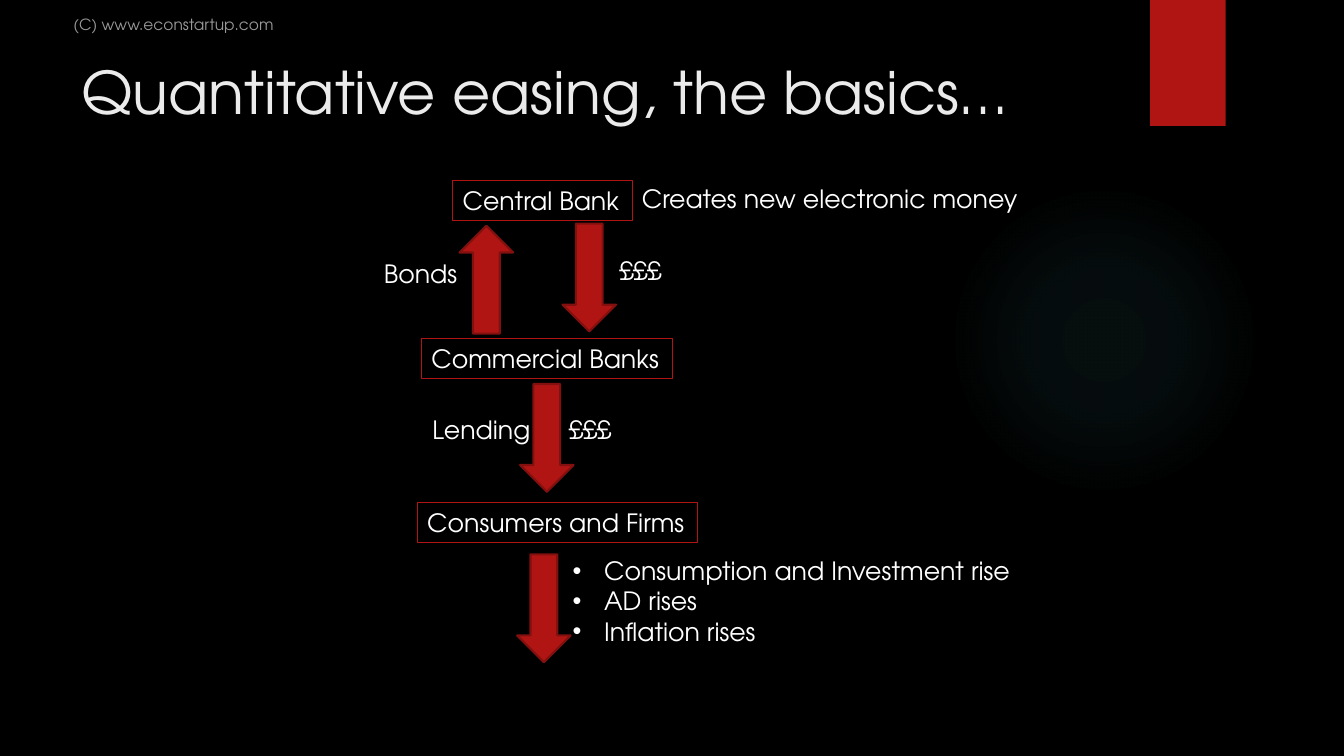
from lxml import etree
from pptx import Presentation
from pptx.dml.color import RGBColor
from pptx.enum.shapes import MSO_SHAPE
from pptx.enum.text import MSO_ANCHOR, MSO_AUTO_SIZE, PP_ALIGN
from pptx.oxml.ns import qn
from pptx.util import Pt

OVAL, RECT = MSO_SHAPE.OVAL, MSO_SHAPE.RECTANGLE
UP, DOWN = MSO_SHAPE.UP_ARROW, MSO_SHAPE.DOWN_ARROW
TOP, BOTTOM = MSO_ANCHOR.TOP, MSO_ANCHOR.BOTTOM
LEFT = PP_ALIGN.LEFT
FIT_SHAPE, NO_FIT = MSO_AUTO_SIZE.SHAPE_TO_FIT_TEXT, MSO_AUTO_SIZE.NONE

BLACK = RGBColor(0x00, 0x00, 0x00)
WHITE = RGBColor(0xFF, 0xFF, 0xFF)
OFF_WHITE = RGBColor(0xEB, 0xEB, 0xEB)
GREY = RGBColor(0x99, 0x99, 0x99)
RED = RGBColor(0xB0, 0x15, 0x13)
DARK_RED = RGBColor(0x82, 0x10, 0x0E)
TEAL = RGBColor(0x50, 0xB9, 0xC1)
FONT = "TeX Gyre Adventor"

TITLE = "Quantitative easing, the basics…"
COPYRIGHT = "(C) www.econstartup.com"
EFFECTS = ["Consumption and Investment rise", "AD rises", "Inflation rises"]
ACTORS = [
    ("Central Bank", 323.3, 128.9, 128.2),
    ("Commercial Banks", 301, 241.9, 179.3),
    ("Consumers and Firms", 298.1, 358.6, 200.2),
]
FLOW_LABELS = [
    ("Creates new electronic money", 451.4, 127.4, 288),
    ("Bonds", 267.1, 180.7, 67.7),
    ("£££", 434.9, 178.6, 44.6),
    ("Lending", 301.7, 292.3, 85.7),
    ("£££", 398.9, 292.3, 44.6),
]
FLOWS = [
    (DOWN, 401.8, 159.8),
    (UP, 328.3, 161.3),
    (DOWN, 371.5, 274.3),
    (DOWN, 369.4, 396),
]
GLOW_STOPS = [(0, 7), (36, 6), (69, 0)]
LABEL_HEIGHT = 28.8
ARROW_SIZE = (38.2, 77)
BULLET_INDENT = 22.5


def place(shape, left, top, width, height):
    shape.left, shape.top = Pt(left), Pt(top)
    shape.width, shape.height = Pt(width), Pt(height)


def write(paragraph, text, size, color):
    paragraph.alignment = LEFT
    run = paragraph.add_run()
    run.text = text
    run.font.name = FONT
    run.font.size = Pt(size)
    run.font.color.rgb = color


def add_solid(slide, kind, left, top, width, height):
    shape = slide.shapes.add_shape(kind, Pt(left), Pt(top), Pt(width), Pt(height))
    shape.shadow.inherit = False
    shape.fill.solid()
    shape.fill.fore_color.rgb = RED
    shape.line.fill.background()
    return shape


def add_glow(slide):
    glow = add_solid(slide, OVAL, 677.5, 131.8, 221.8, 221.8)
    solid = glow._element.spPr.find(qn("a:solidFill"))
    gradient = etree.Element(qn("a:gradFill"), rotWithShape="1")
    stops = etree.SubElement(gradient, qn("a:gsLst"))
    for position, opacity in GLOW_STOPS:
        stop = etree.SubElement(stops, qn("a:gs"), pos=str(position * 1000))
        color = etree.SubElement(stop, qn("a:srgbClr"), val=str(TEAL))
        etree.SubElement(color, qn("a:alpha"), val=str(opacity * 1000))
    radial = etree.SubElement(gradient, qn("a:path"), path="circle")
    etree.SubElement(radial, qn("a:fillToRect"), l="50000", t="50000", r="50000", b="50000")
    solid.getparent().replace(solid, gradient)


def add_label(slide, text, left, top, width):
    label = slide.shapes.add_textbox(Pt(left), Pt(top), Pt(width), Pt(LABEL_HEIGHT))
    label.text_frame.word_wrap = False
    label.text_frame.auto_size = FIT_SHAPE
    write(label.text_frame.paragraphs[0], text, 18, WHITE)
    return label


def add_title(slide):
    title = slide.shapes.title
    place(title, 51.1, 36, 740.9, 110.2)
    title.text_frame.vertical_anchor = TOP
    title.text_frame.auto_size = NO_FIT
    write(title.text_frame.paragraphs[0], TITLE, 42, OFF_WHITE)


def add_effects(slide):
    effects = slide.placeholders[1]
    place(effects, 401.8, 393.1, 331.2, 72.7)
    frame = effects.text_frame
    frame.word_wrap = False
    frame.auto_size = FIT_SHAPE
    for index, effect in enumerate(EFFECTS):
        paragraph = frame.add_paragraph() if index else frame.paragraphs[0]
        properties = paragraph._p.get_or_add_pPr()
        properties.set("marL", str(Pt(BULLET_INDENT)))
        properties.set("indent", str(-Pt(BULLET_INDENT)))
        paragraph.space_before = Pt(0)
        write(paragraph, effect, 18, WHITE)


def add_copyright(slide):
    notice = slide.shapes.add_textbox(Pt(45.4), Pt(3.6), Pt(303.8), Pt(23.8))
    notice.text_frame.word_wrap = True
    notice.text_frame.vertical_anchor = BOTTOM
    write(notice.text_frame.paragraphs[0], COPYRIGHT, 11, GREY)


def main():
    deck = Presentation()
    deck.slide_width, deck.slide_height = Pt(960), Pt(540)
    slide = deck.slides.add_slide(deck.slide_layouts[1])
    slide.background.fill.solid()
    slide.background.fill.fore_color.rgb = BLACK

    add_glow(slide)
    add_solid(slide, RECT, 821.5, 0, 54, 90)
    add_title(slide)
    for actor in ACTORS:
        box = add_label(slide, *actor)
        box.line.color.rgb = RED
        box.line.width = Pt(0.75)
    for kind, left, top in FLOWS:
        arrow = add_solid(slide, kind, left, top, *ARROW_SIZE)
        arrow.line.color.rgb = DARK_RED
        arrow.line.width = Pt(1.5)
    for label in FLOW_LABELS:
        add_label(slide, *label)
    add_effects(slide)
    add_copyright(slide)
    deck.save("out.pptx")


if __name__ == "__main__":
    main()
